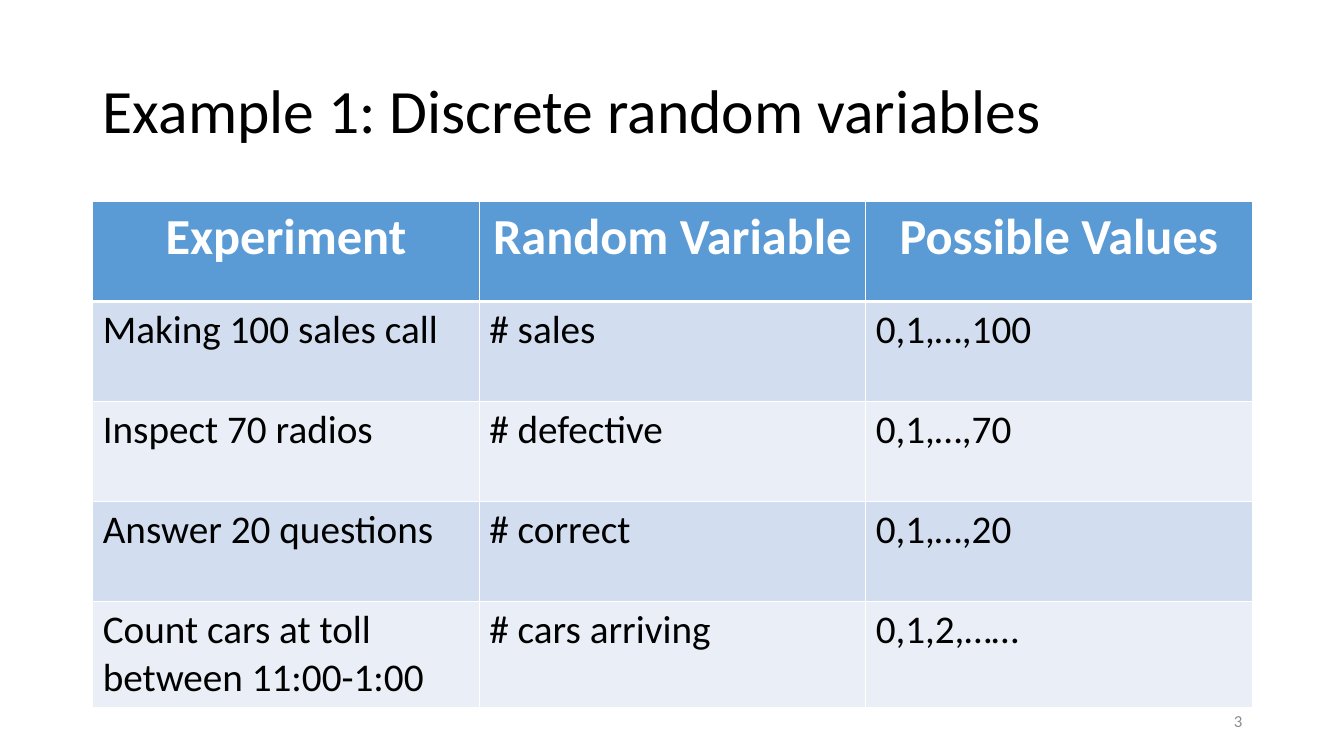
import pptx
import pptx.dml.color
import pptx.enum.text
import pptx.oxml
import pptx.oxml.ns
import pptx.util
from pptx.util import Inches

COLOURS = {
    "text": "000000",
    "white": "FFFFFF",
    "header": "5B9BD5",
    "odd": "D2DEEF",
    "even": "EAEFF7",
    "number": "8C8C8C",
}
ROWS = [
    ("Experiment", "Random Variable", "Possible Values"),
    ("Making 100 sales call", "# sales", "0,1,…,100"),
    ("Inspect 70 radios", "# defective", "0,1,…,70"),
    ("Answer 20 questions", "# correct", "0,1,…,20"),
    ("Count cars at toll between 11:00-1:00", "# cars arriving", "0,1,2,……"),
]
ALIGN = pptx.enum.text.PP_ALIGN
MIDDLE = pptx.enum.text.MSO_ANCHOR.MIDDLE


def colour(name):
    return pptx.dml.color.RGBColor.from_string(COLOURS[name])


def write(frame, text, size, colour_name, align=ALIGN.LEFT, bold=False):
    frame.text = text
    frame.word_wrap = True
    para = frame.paragraphs[0]
    para.alignment = align
    para.font.name = "Calibri"
    para.font.size = pptx.util.Pt(size)
    para.font.bold = bold
    para.font.color.rgb = colour(colour_name)
    return para


def add_title(page, text):
    title = page.shapes.title
    title.left, title.top = Inches(0.92), Inches(0.4)
    title.width, title.height = Inches(11.5), Inches(1.45)
    write(title.text_frame, text, 44, "text").line_spacing = 0.9
    title.text_frame.auto_size = pptx.enum.text.MSO_AUTO_SIZE.NONE
    title.text_frame.vertical_anchor = MIDDLE


def set_borders(cell, widths):
    properties = cell._tc.get_or_add_tcPr()
    for side, width in widths.items():
        properties.append(pptx.oxml.parse_xml(
            f'<a:{side} {pptx.oxml.ns.nsdecls("a")} w="{pptx.util.Pt(width)}">'
            f'<a:solidFill><a:srgbClr val="{COLOURS["white"]}"/></a:solidFill>'
            f'</a:{side}>'))


def add_variable_table(page):
    table = page.shapes.add_table(
        len(ROWS), len(ROWS[0]), Inches(0.92), Inches(2), Inches(11.5), Inches(4.96)).table
    for row_index, texts in enumerate(ROWS):
        is_header = row_index == 0
        fill = "header" if is_header else ("even", "odd")[row_index % 2]
        for column_index, text in enumerate(texts):
            cell = table.cell(row_index, column_index)
            set_borders(cell, {"lnL": 1, "lnR": 1,
                               "lnT": 3 if row_index == 1 else 1,
                               "lnB": 3 if is_header else 1})
            cell.fill.solid()
            cell.fill.fore_color.rgb = colour(fill)
            if is_header:
                write(cell.text_frame, text, 36, "white", ALIGN.CENTER, True)
            else:
                write(cell.text_frame, text, 28, "text")


def add_page_number(page, text):
    box = page.shapes.add_textbox(Inches(9.42), Inches(6.95), Inches(3), Inches(0.4))
    write(box.text_frame, text, 12, "number", ALIGN.RIGHT)
    box.text_frame.vertical_anchor = MIDDLE


def main():
    """Build the slide on discrete random variables."""
    deck = pptx.Presentation()
    deck.slide_width, deck.slide_height = Inches(13.33), Inches(7.5)
    page = deck.slides.add_slide(deck.slide_layouts[5])
    add_title(page, "Example 1: Discrete random variables")
    add_variable_table(page)
    add_page_number(page, "3")
    deck.save("out.pptx")


if __name__ == "__main__":
    main()
